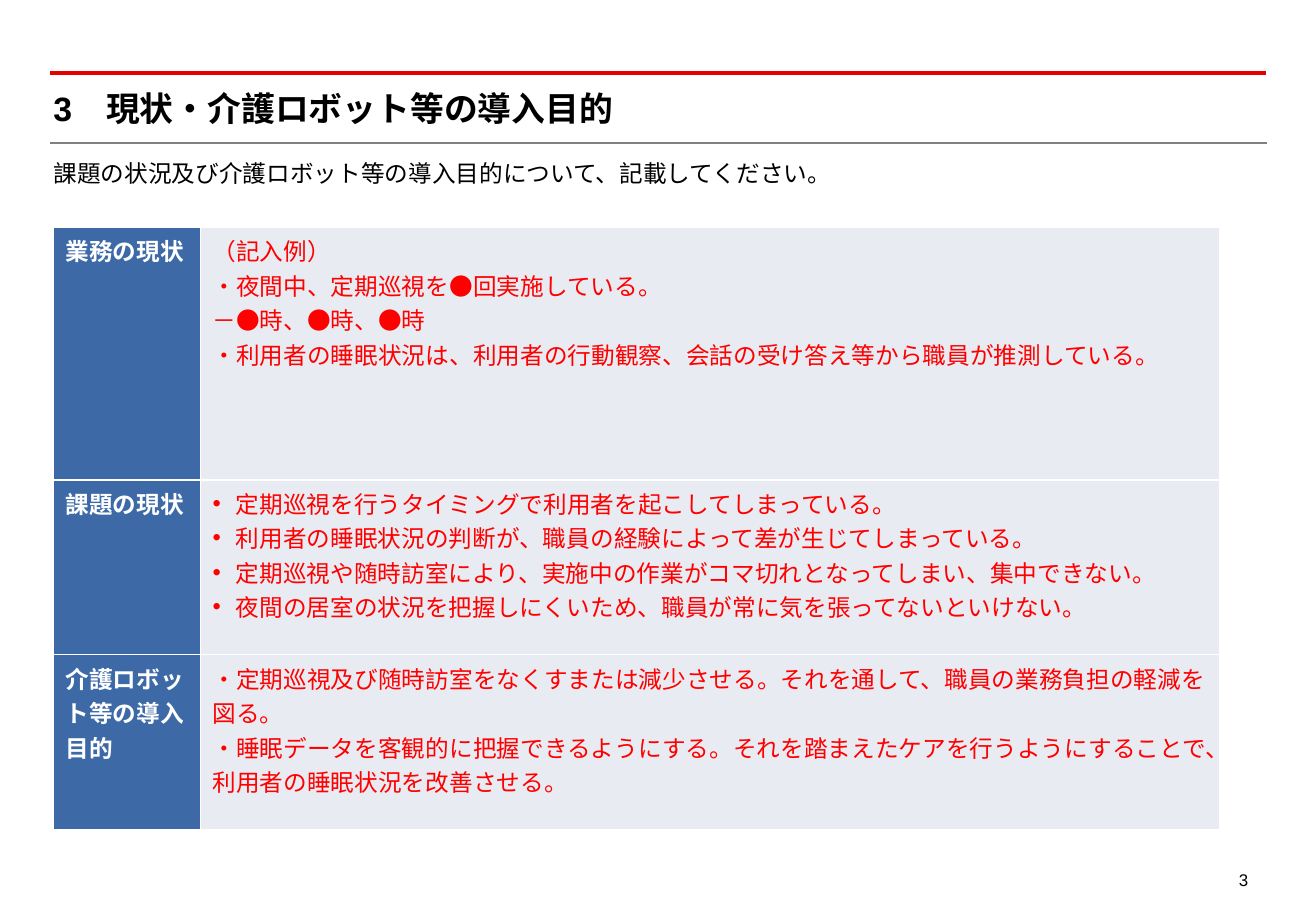
from lxml import etree
from pptx import Presentation
from pptx.dml.color import RGBColor
from pptx.enum import shapes, text
from pptx.oxml import ns
from pptx.util import Inches, Pt

LATIN, JAPANESE = "Arial", "Noto Sans CJK JP"
BLACK, WHITE, RED = "000000", "FFFFFF", "FF0000"
LABEL_BLUE, ANSWER_GREY = "3D6AA7", "E8EBF1"

LEFT, WIDTH = 0.44, 9.91
COLUMN_WIDTHS = [1.21, 8.39]
ROW_HEIGHTS = [2.08, 1.44, 1.44]

# label, answer lines, bulleted
ROWS = [
    ("業務の現状", [
        "（記入例）",
        "・夜間中、定期巡視を●回実施している。",
        "－●時、●時、●時",
        "・利用者の睡眠状況は、利用者の行動観察、会話の受け答え等から職員が推測している。",
    ], False),
    ("課題の現状", [
        "定期巡視を行うタイミングで利用者を起こしてしまっている。",
        "利用者の睡眠状況の判断が、職員の経験によって差が生じてしまっている。",
        "定期巡視や随時訪室により、実施中の作業がコマ切れとなってしまい、集中できない。",
        "夜間の居室の状況を把握しにくいため、職員が常に気を張ってないといけない。",
    ], True),
    ("介護ロボット等の導入目的", [
        "・定期巡視及び随時訪室をなくすまたは減少させる。それを通して、職員の業務負担の軽減を図る。",
        "・睡眠データを客観的に把握できるようにする。それを踏まえたケアを行うようにすることで、"
        "利用者の睡眠状況を改善させる。",
    ], False),
]


def rgb(color):
    return RGBColor.from_string(color)


def add_xml(parent, tag, **attributes):
    return etree.SubElement(parent, ns.qn(tag), attributes)


def add_bullet(paragraph):
    properties = paragraph._p.get_or_add_pPr()
    indent = Inches(0.19)
    properties.set("marL", str(indent))
    properties.set("indent", str(-indent))
    add_xml(properties, "a:buFont", typeface=LATIN)
    add_xml(properties, "a:buChar", char="•")


def write(frame, lines, size=14, font=LATIN, color=BLACK, bold=False,
          align=text.PP_ALIGN.LEFT, spacing=1.0, bulleted=False):
    """Fill a text frame with one paragraph per line."""
    for index, line in enumerate(lines):
        paragraph = frame.add_paragraph() if index else frame.paragraphs[0]
        paragraph.alignment = align
        paragraph.line_spacing = spacing
        paragraph.space_before = Pt(0)
        if bulleted:
            add_bullet(paragraph)
        run = paragraph.add_run()
        run.text = line
        run.font.size = Pt(size)
        run.font.name = font
        run.font.bold = bold
        run.font.color.rgb = rgb(color)
        add_xml(run._r.get_or_add_rPr(), "a:ea", typeface=font)


def clear_margins(frame):
    frame.margin_left = frame.margin_right = 0
    frame.margin_top = frame.margin_bottom = 0


def add_title(slide, line):
    title = slide.shapes.title
    title.left, title.top = Inches(LEFT), Inches(0.72)
    title.width, title.height = Inches(WIDTH), Inches(0.34)
    clear_margins(title.text_frame)
    title.text_frame.vertical_anchor = text.MSO_ANCHOR.MIDDLE
    write(title.text_frame, [line], size=20, bold=True)


def add_text(slide, line, left, top, width, height, margins=True, **style):
    box = slide.shapes.add_textbox(
        Inches(left), Inches(top), Inches(width), Inches(height))
    box.text_frame.word_wrap = True
    if not margins:
        clear_margins(box.text_frame)
    write(box.text_frame, [line], spacing=1.2, **style)


def add_rule(slide, y, right, color, weight):
    rule = slide.shapes.add_connector(
        shapes.MSO_CONNECTOR.STRAIGHT,
        Inches(0.41), Inches(y), Inches(right), Inches(y))
    rule.line.color.rgb = rgb(color)
    rule.line.width = Pt(weight)
    add_xml(rule._element.spPr, "a:effectLst")


def format_cell(cell, fill):
    properties = cell._tc.get_or_add_tcPr()
    for side in ("a:lnL", "a:lnR", "a:lnT", "a:lnB"):
        border = add_xml(properties, side, w=str(Pt(1)))
        add_xml(add_xml(border, "a:solidFill"), "a:srgbClr", val=WHITE)
    cell.fill.solid()
    cell.fill.fore_color.rgb = rgb(fill)


def add_answer_table(slide):
    table = slide.shapes.add_table(
        len(ROWS), len(COLUMN_WIDTHS), Inches(LEFT), Inches(1.87),
        Inches(sum(COLUMN_WIDTHS)), Inches(sum(ROW_HEIGHTS))).table
    table.first_row = table.horz_banding = False
    for column, width in zip(table.columns, COLUMN_WIDTHS):
        column.width = Inches(width)
    for row, height, (label, answers, bulleted) in zip(
            table.rows, ROW_HEIGHTS, ROWS):
        row.height = Inches(height)
        label_cell, answer_cell = row.cells
        format_cell(label_cell, LABEL_BLUE)
        write(label_cell.text_frame, [label], font=JAPANESE, color=WHITE,
              bold=True)
        format_cell(answer_cell, ANSWER_GREY)
        write(answer_cell.text_frame, answers, font=JAPANESE, color=RED,
              bulleted=bulleted)


def main():
    deck = Presentation()
    deck.slide_width, deck.slide_height = Inches(10.83), Inches(7.5)
    slide = deck.slides.add_slide(deck.slide_layouts.get_by_name("Title Only"))
    add_rule(slide, 0.6, 10.42, "E60000", 2)
    add_rule(slide, 1.18, 10.43, "808080", 1.25)
    add_title(slide, "3　現状・介護ロボット等の導入目的")
    add_text(slide, "課題の状況及び介護ロボット等の導入目的について、記載してください。",
             LEFT, 1.26, WIDTH, 0.25, margins=False)
    add_answer_table(slide)
    add_text(slide, "3", 9.93, 7.08, 0.44, 0.28, size=10,
             align=text.PP_ALIGN.RIGHT)
    deck.save("out.pptx")


if __name__ == "__main__":
    main()
